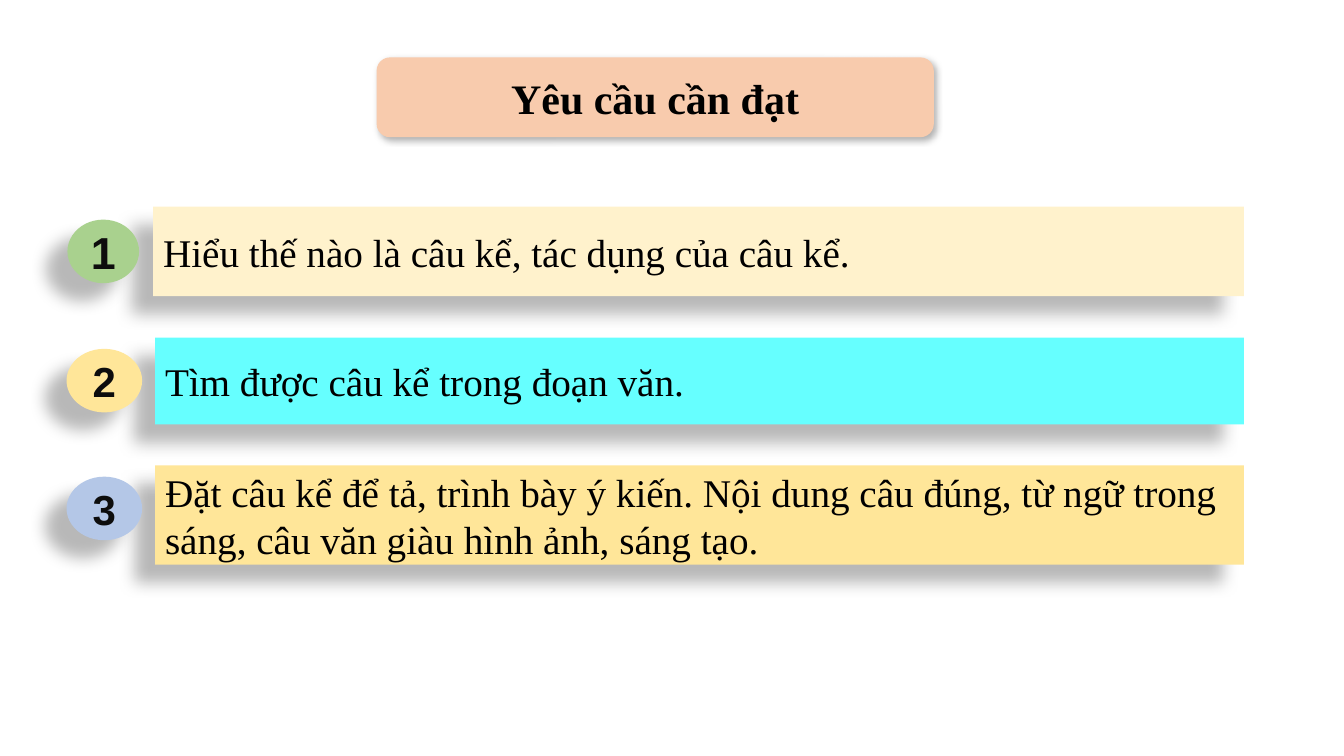
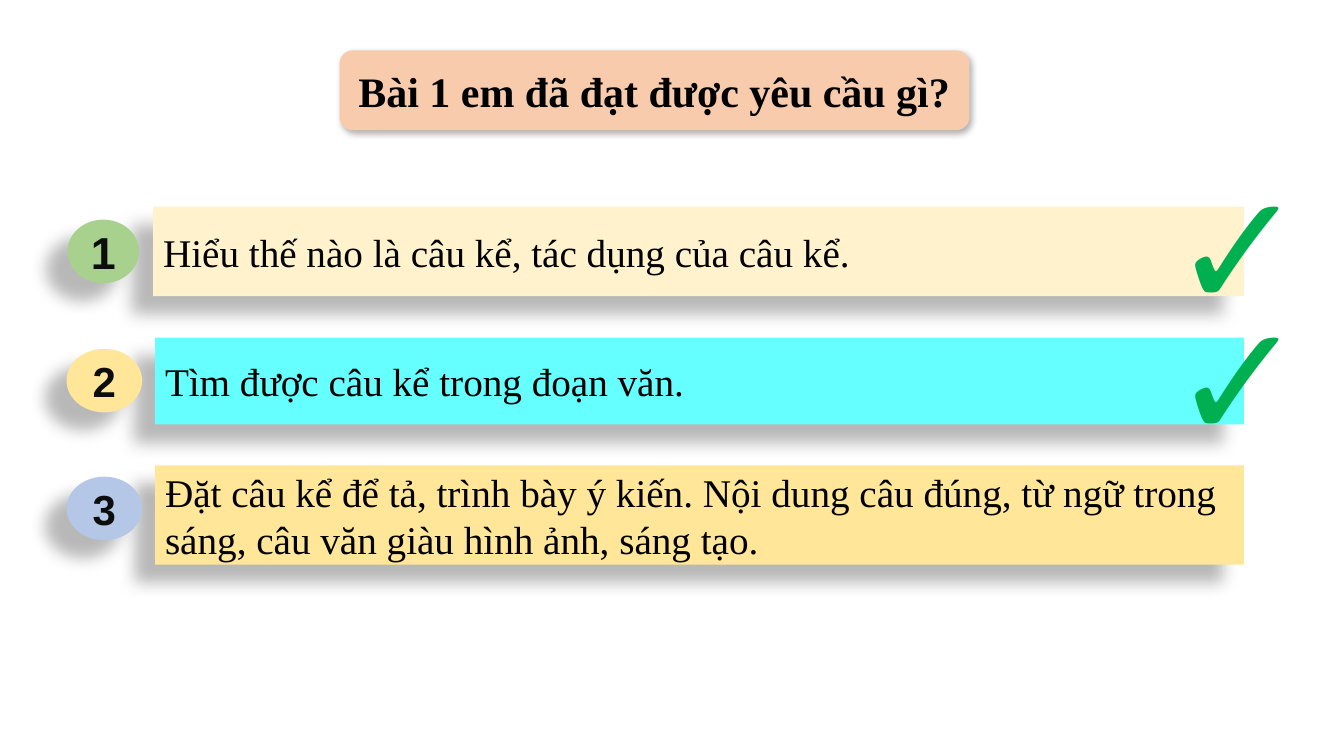
from lxml.etree import SubElement
from pptx import Presentation
from pptx.dml.color import RGBColor
from pptx.enum.shapes import MSO_SHAPE
from pptx.enum.text import MSO_ANCHOR, PP_ALIGN
from pptx.oxml.ns import qn
from pptx.util import Pt

COLORS = {
    "title": "F8CBAD", "cream": "FFF2CC", "cyan": "66FFFF", "gold": "FFE699",
    "green": "A9D18E", "blue": "B4C7E7", "tick": "00B050",
    "text": "000000", "number": "0D0D0D", "shadow": "000000",
}
SERIF, SANS, SYMBOL = "Times New Roman", "Arial", "Calibri"
TITLE_SHADOW = dict(blur=4.5, dist=2.6, angle=53, alpha=30)
ROW_SHADOW = dict(blur=11.8, dist=19.7, angle=141, alpha=28)
BADGE_H = 45.4

GOALS = [
    dict(text="Hiểu thế nào là câu kể, tác dụng của câu kể.",
         box=(48.2, 147.6, 840.3, 64), indent=61.2, fill="cream",
         badge="green", badge_w=51.2, badge_dy=9.3, size=32),
    dict(text="Tìm được câu kể trong đoạn văn.",
         box=(47.5, 241.2, 841, 62), indent=63.3, fill="cyan",
         badge="gold", badge_w=54, badge_dy=8, size=30),
    dict(text="Đặt câu kể để tả, trình bày ý kiến. Nội dung câu đúng, từ ngữ "
              "trong sáng, câu văn giàu hình ảnh, sáng tạo.",
         box=(47.5, 332.5, 841, 70.8), indent=63.3, fill="gold",
         badge="blue", badge_w=54, badge_dy=8, size=30),
]


def rgb(name):
    return RGBColor.from_string(COLORS[name])


def add_shadow(sp, blur, dist, angle, alpha):
    sp.shadow.inherit = False
    effects = sp._element.spPr.find(qn("a:effectLst"))
    shadow = SubElement(effects, qn("a:outerShdw"), blurRad=str(Pt(blur)),
                        dist=str(Pt(dist)), dir=str(angle * 60000),
                        algn="ctr", rotWithShape="0")
    color = SubElement(shadow, qn("a:srgbClr"), val=COLORS["shadow"])
    SubElement(color, qn("a:alpha"), val=str(alpha * 1000))


def write(sp, text, size, font, color, bold=False, align=PP_ALIGN.LEFT):
    tf = sp.text_frame
    tf.word_wrap = True
    p = tf.paragraphs[0]
    p.text = text
    p.alignment = align
    p.font.size, p.font.name, p.font.bold = Pt(size), font, bold
    p.font.color.rgb = rgb(color)


def add_panel(shapes, kind, box, fill, shadow, text, size, font, color="text",
              bold=False, align=PP_ALIGN.LEFT):
    sp = shapes.add_shape(kind, *map(Pt, box))
    sp.fill.solid()
    sp.fill.fore_color.rgb = rgb(fill)
    sp.line.fill.background()
    add_shadow(sp, **shadow)
    sp.text_frame.vertical_anchor = MSO_ANCHOR.MIDDLE
    write(sp, text, size, font, color, bold, align)
    return sp


def add_title(s, text, box):
    add_panel(s.shapes, MSO_SHAPE.ROUNDED_RECTANGLE, box, "title", TITLE_SHADOW,
              text, 30, SERIF, bold=True, align=PP_ALIGN.CENTER)


def add_goal(s, number, goal):
    x, y, w, h = goal["box"]
    indent = goal["indent"]
    group = s.shapes.add_group_shape()
    add_panel(group.shapes, MSO_SHAPE.RECTANGLE, (x + indent, y, w - indent, h),
              goal["fill"], ROW_SHADOW, goal["text"], 28, SERIF)
    badge = add_panel(group.shapes, MSO_SHAPE.OVAL,
                      (x, y + goal["badge_dy"], goal["badge_w"], BADGE_H),
                      goal["badge"], ROW_SHADOW, str(number), goal["size"], SANS,
                      "number", True, PP_ALIGN.CENTER)
    badge.text_frame.word_wrap = False


def add_tick(s, box):
    x, y, w, h = box
    sp = s.shapes.add_textbox(Pt(x + w - 59), Pt(y - 46), Pt(68.4), Pt(146.9))
    write(sp, "✓", 115, SYMBOL, "tick")


def add_goals_slide(prs, title, title_box, reached=0):
    s = prs.slides.add_slide(prs.slide_layouts[6])
    add_title(s, title, title_box)
    for number, goal in enumerate(GOALS, 1):
        add_goal(s, number, goal)
    for goal in GOALS[:reached]:
        add_tick(s, goal["box"])


def main():
    prs = Presentation()
    prs.slide_width, prs.slide_height = Pt(960), Pt(540)
    add_goals_slide(prs, "Yêu cầu cần đạt", (269, 41, 398, 57))
    add_goals_slide(prs, "Bài 1 em đã đạt được yêu cầu gì?", (242.5, 36, 450, 57),
                    reached=2)
    prs.save("out.pptx")


if __name__ == "__main__":
    main()
